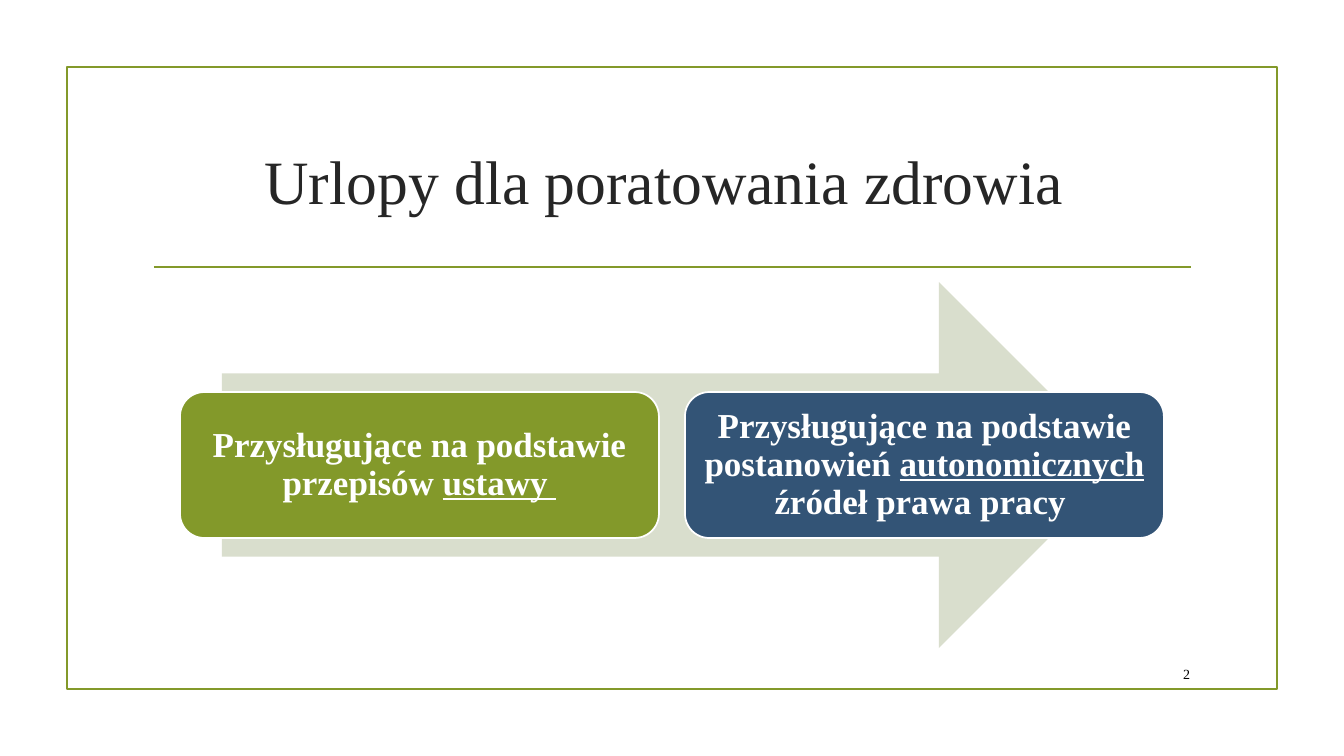
import pptx
import pptx.util
import pptx.dml.color
import pptx.enum.shapes
import pptx.enum.text
import lxml.etree

# Content
TITLE = "Urlopy dla poratowania zdrowia "
PAGE_NUMBER = "2"
# Each run: text, underlined
LEAVE_TYPES = [
    ("green", [("Przysługujące na podstawie przepisów ", False), ("ustawy ", True)]),
    ("navy", [("Przysługujące na podstawie postanowień ", False),
              ("autonomicznych", True), (" źródeł prawa pracy ", False)]),
]

# Style
COLORS = {"green": "83992A", "navy": "335476", "arrow": "D9DECD",
          "white": "FFFFFF", "title": "262626", "black": "000000"}
FONT = "Times New Roman"
LINE_WIDTH = 1.25

# Layout in px
SLIDE_SIZE = (1344, 756)
FRAME = (67, 67, 1210, 622)
RULE = (154, 267, 1191, 267)
TITLE_BOX = (143, 108, 1058, 144)
ARROW = (222, 282, 900, 366)
CARD_LEFT, CARD_TOP, CARD_WIDTH, CARD_HEIGHT = 180, 392, 479, 146
CARD_GAP = 26
NUMBER_BOX = (1141, 658, 59, 31)
EMU_PER_PX = 914400 / 100.8

SHAPES = pptx.enum.shapes.MSO_SHAPE
ALIGN = pptx.enum.text.PP_ALIGN


def to_emu(lengths):
    return [round(length * EMU_PER_PX) for length in lengths]


def color(name):
    return pptx.dml.color.RGBColor.from_string(COLORS[name])


def set_line(line, name):
    line.color.rgb = color(name)
    line.width = pptx.util.Pt(LINE_WIDTH)


def add_block(slide, kind, box, fill=None, line=None):
    shape = slide.shapes.add_shape(kind, *to_emu(box))
    shape.shadow.inherit = False
    if fill:
        shape.fill.solid()
        shape.fill.fore_color.rgb = color(fill)
    else:
        shape.fill.background()
    if line:
        set_line(shape.line, line)
    else:
        shape.line.fill.background()
    return shape


def write(shape, runs, size, ink, align, bold=False, spacing=1.0, margin=None):
    frame = shape.text_frame
    frame.word_wrap = True
    frame.vertical_anchor = pptx.enum.text.MSO_ANCHOR.MIDDLE
    if margin is not None:
        (inset,) = to_emu([margin])
        frame.margin_left = frame.margin_right = inset
        frame.margin_top = frame.margin_bottom = inset
    paragraph = frame.paragraphs[0]
    paragraph.alignment = align
    paragraph.line_spacing = spacing
    for text, underlined in runs:
        run = paragraph.add_run()
        run.text = text
        run.font.name = FONT
        run.font.size = pptx.util.Pt(size)
        run.font.bold = bold
        run.font.underline = underlined
        run.font.color.rgb = color(ink)


def main():
    presentation = pptx.Presentation()
    presentation.slide_width, presentation.slide_height = to_emu(SLIDE_SIZE)
    slide = presentation.slides.add_slide(presentation.slide_layouts[6])

    # Frame and rule
    add_block(slide, SHAPES.RECTANGLE, FRAME, line="green")
    rule = slide.shapes.add_connector(
        pptx.enum.shapes.MSO_CONNECTOR.STRAIGHT, *to_emu(RULE))
    set_line(rule.line, "green")
    properties = rule.element.spPr
    lxml.etree.SubElement(properties, pptx.oxml.ns.qn("a:effectLst"))

    # Title
    title = slide.shapes.add_textbox(*to_emu(TITLE_BOX))
    write(title, [(TITLE, False)], 44, "title", ALIGN.CENTER)

    # Arrow with the two kinds of leave
    add_block(slide, SHAPES.RIGHT_ARROW, ARROW, fill="arrow")
    for index, (fill, runs) in enumerate(LEAVE_TYPES):
        left = CARD_LEFT + index * (CARD_WIDTH + CARD_GAP)
        card = add_block(slide, SHAPES.ROUNDED_RECTANGLE,
                         (left, CARD_TOP, CARD_WIDTH, CARD_HEIGHT), fill, "white")
        write(card, runs, 25, "white", ALIGN.CENTER, bold=True, spacing=0.9, margin=10)

    # Page number
    number = slide.shapes.add_textbox(*to_emu(NUMBER_BOX))
    write(number, [(PAGE_NUMBER, False)], 10, "black", ALIGN.RIGHT)

    presentation.save("out.pptx")


if __name__ == "__main__":
    main()
